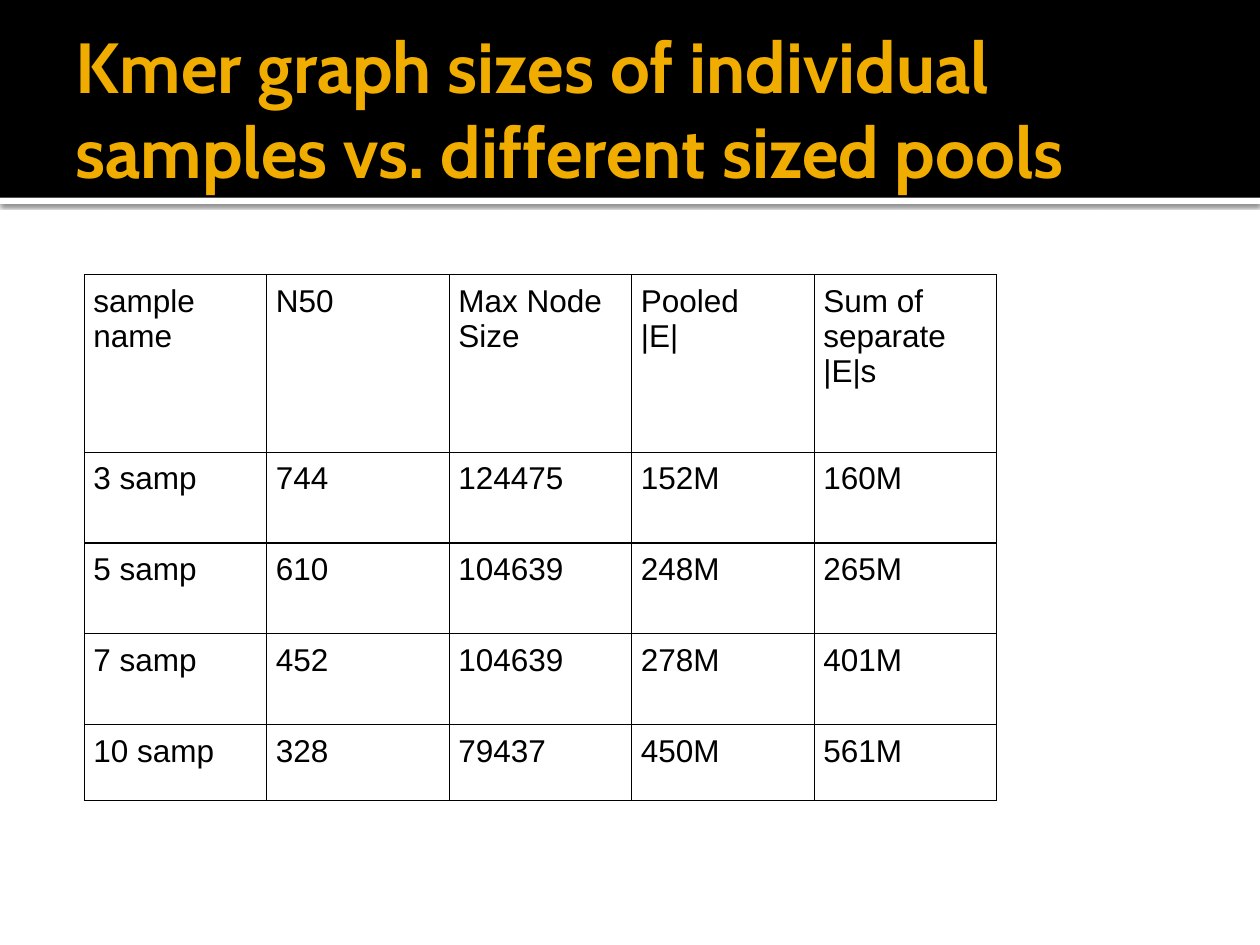
import pptx
import pptx.dml.color
import pptx.enum.shapes
import pptx.enum.text
import pptx.oxml
import pptx.oxml.ns
import pptx.util

Pt = pptx.util.Pt
BLACK = pptx.dml.color.RGBColor(0x00, 0x00, 0x00)
WHITE = pptx.dml.color.RGBColor(0xFF, 0xFF, 0xFF)
AMBER = pptx.dml.color.RGBColor(0xF0, 0xAD, 0x00)

TITLE = "Kmer graph sizes of individual samples vs. different sized pools"
ROWS = [
    ["sample name", "N50", "Max Node Size", "Pooled\n|E|", "Sum of separate\n|E|s"],
    ["3 samp", "744", "124475", "152M", "160M"],
    ["5 samp", "610", "104639", "248M", "265M"],
    ["7 samp", "452", "104639", "278M", "401M"],
    ["10 samp", "328", "79437", "450M", "561M"],
]
COLUMN_WIDTH = 104.3
ROW_HEIGHTS = [101.5, 51.9, 51.9, 51.9, 43.2]


def write_text(text_frame, text, *, font, size, color, bold=False):
    text_frame.text = text
    text_frame.word_wrap = True
    for paragraph in text_frame.paragraphs:
        paragraph.alignment = pptx.enum.text.PP_ALIGN.LEFT
        for run in paragraph.runs:
            run.font.name = font
            run.font.size = Pt(size)
            run.font.bold = bold
            run.font.color.rgb = color


def add_band(slide, top, height, color):
    band = slide.shapes.add_shape(
        pptx.enum.shapes.MSO_SHAPE.RECTANGLE, Pt(0), Pt(top), Pt(720), Pt(height)
    )
    band.shadow.inherit = False
    band.fill.solid()
    band.fill.fore_color.rgb = color
    band.line.fill.background()
    return band


def add_shadow(shape, blur, distance, opacity):
    effects = shape.element.spPr.find(pptx.oxml.ns.qn("a:effectLst"))
    effects.append(pptx.oxml.parse_xml(
        f'<a:outerShdw {pptx.oxml.ns.nsdecls("a")} blurRad="{Pt(blur)}" '
        f'dist="{Pt(distance)}" dir="5400000" algn="tl" rotWithShape="0">'
        f'<a:srgbClr val="{BLACK}"><a:alpha val="{opacity * 1000}"/></a:srgbClr>'
        "</a:outerShdw>"
    ))


def place_title(slide, text):
    title = slide.shapes.title
    title.left, title.top, title.width, title.height = Pt(36), Pt(12.2), Pt(648), Pt(98.6)
    frame = title.text_frame
    frame.margin_left = Pt(7.2)
    frame.margin_right = frame.margin_top = frame.margin_bottom = Pt(3.6)
    frame.vertical_anchor = pptx.enum.text.MSO_ANCHOR.MIDDLE
    frame.auto_size = pptx.enum.text.MSO_AUTO_SIZE.NONE
    write_text(frame, text, font="Cabin", size=40.5, color=AMBER, bold=True)
    slide.shapes.element.append(title.element)


def add_borders(cell, width, color):
    properties = cell._tc.get_or_add_tcPr()
    for side in ("lnL", "lnR", "lnT", "lnB"):
        properties.append(pptx.oxml.parse_xml(
            f'<a:{side} {pptx.oxml.ns.nsdecls("a")} w="{Pt(width)}">'
            f'<a:solidFill><a:srgbClr val="{color}"/></a:solidFill></a:{side}>'
        ))


def format_cell(cell, text):
    cell.margin_left = cell.margin_right = Pt(5.2)
    cell.margin_top = cell.margin_bottom = Pt(5.2)
    add_borders(cell, 0.75, BLACK)
    cell.fill.background()
    write_text(cell.text_frame, text, font="Arial", size=18, color=BLACK)


def add_size_table(slide, rows):
    column_count = len(rows[0])
    table = slide.shapes.add_table(
        len(rows), column_count, Pt(48.2), Pt(156.9),
        Pt(COLUMN_WIDTH * column_count), Pt(sum(ROW_HEIGHTS)),
    ).table
    table.first_row = False
    table.horz_banding = False
    for column in table.columns:
        column.width = Pt(COLUMN_WIDTH)
    for row, height, texts in zip(table.rows, ROW_HEIGHTS, rows):
        row.height = Pt(height)
        for cell, text in zip(row.cells, texts):
            format_cell(cell, text)


def main():
    presentation = pptx.Presentation()
    presentation.slide_width = Pt(720)
    presentation.slide_height = Pt(540)
    slide = presentation.slides.add_slide(presentation.slide_layouts.get_by_name("Title Only"))
    slide.background.fill.solid()
    slide.background.fill.fore_color.rgb = WHITE
    divider = add_band(slide, 113, 3.6, WHITE)
    add_shadow(divider, blur=2.5, distance=0.8, opacity=60)
    add_band(slide, 0, 113, BLACK)
    place_title(slide, TITLE)
    add_size_table(slide, ROWS)
    presentation.save("out.pptx")


if __name__ == "__main__":
    main()
